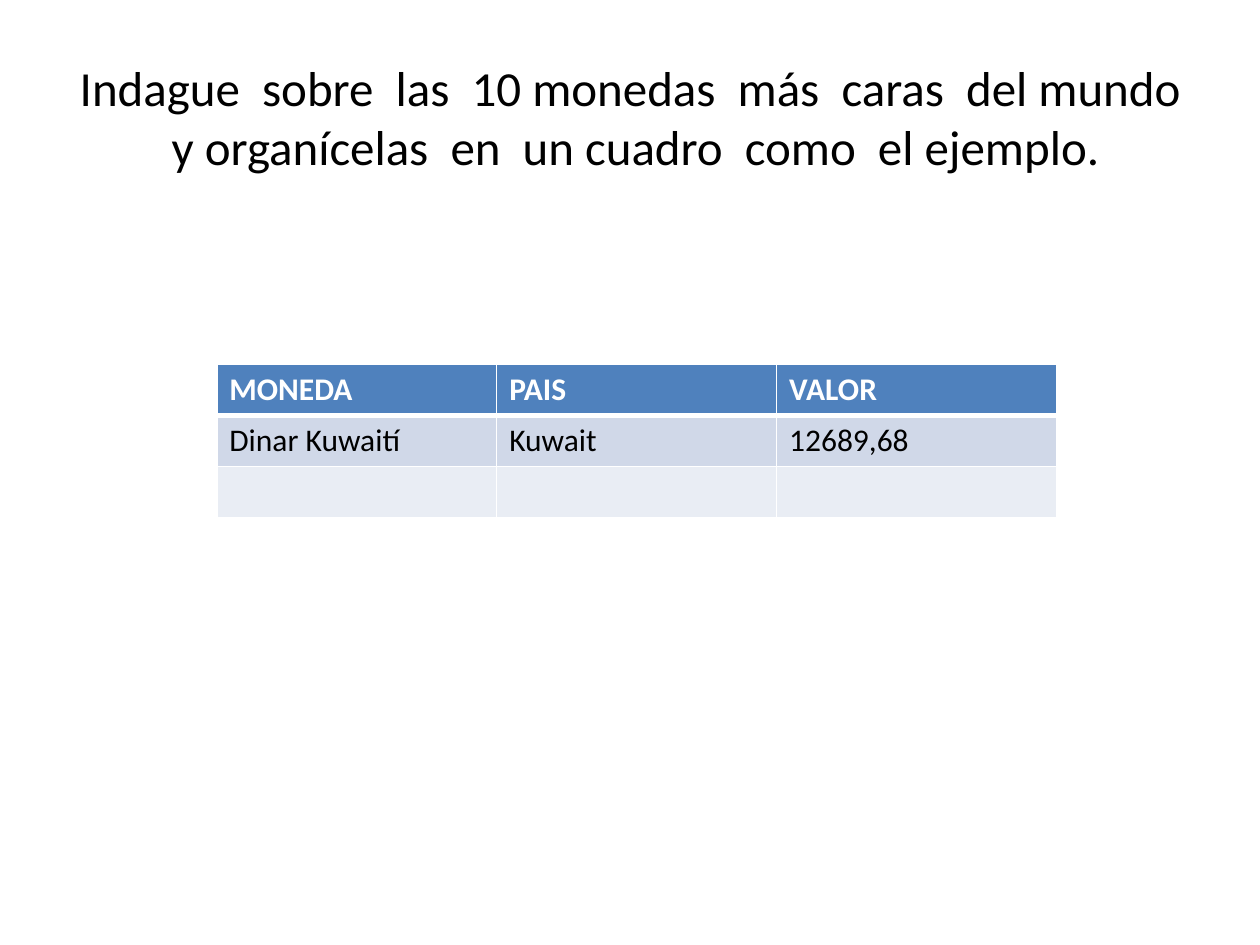
from dataclasses import dataclass

from lxml import etree
from pptx import Presentation
from pptx.dml.color import RGBColor
from pptx.enum.text import MSO_ANCHOR, PP_ALIGN
from pptx.oxml.ns import qn
from pptx.util import Cm, Pt

CENTER, MIDDLE = PP_ALIGN.CENTER, MSO_ANCHOR.MIDDLE
BLANK = 6


@dataclass(frozen=True)
class Theme:
    font: str = "Calibri"
    title_size: int = 28
    table_size: int = 18
    text: str = "000000"
    white: str = "FFFFFF"
    header: str = "4F81BD"
    bands: tuple = ("D0D8E8", "E9EDF4")
    line: float = 1
    header_line: float = 3


THEME = Theme()
TITLE = ("Indague  sobre  las  10 monedas  más  caras  del mundo  "
         "y organícelas  en  un cuadro  como  el ejemplo.")
ROWS = [
    ("MONEDA", "PAIS", "VALOR"),
    ("Dinar Kuwaití\u00a0", "Kuwait", "12689,68"),
    ("", "", ""),
]


def style_font(p, size, color, bold=False):
    p.font.name = THEME.font
    p.font.size = Pt(size)
    p.font.bold = bold
    p.font.color.rgb = RGBColor.from_string(color)


def set_borders(cell, top, bottom):
    tc_pr = cell._tc.get_or_add_tcPr()
    widths = {"a:lnL": THEME.line, "a:lnR": THEME.line, "a:lnT": top, "a:lnB": bottom}
    for tag, width in widths.items():
        ln = etree.SubElement(tc_pr, qn(tag), w=str(Pt(width)))
        fill = etree.SubElement(ln, qn("a:solidFill"))
        etree.SubElement(fill, qn("a:srgbClr"), val=THEME.white)


def add_title(slide, left, top, width, height):
    tf = slide.shapes.add_textbox(left, top, width, height).text_frame
    tf.word_wrap = True
    tf.vertical_anchor = MIDDLE
    p = tf.paragraphs[0]
    p.text = TITLE
    p.alignment = CENTER
    style_font(p, THEME.title_size, THEME.text)


def add_currency_table(slide, left, top, width, height):
    table = slide.shapes.add_table(len(ROWS), len(ROWS[0]), left, top, width, height).table
    for i, row in enumerate(ROWS):
        is_header = i == 0
        fill = THEME.header if is_header else THEME.bands[(i - 1) % 2]
        color = THEME.white if is_header else THEME.text
        # The thick rule separates the header from the body
        top_line = THEME.header_line if i == 1 else THEME.line
        bottom_line = THEME.header_line if is_header else THEME.line
        for j, text in enumerate(row):
            cell = table.cell(i, j)
            set_borders(cell, top_line, bottom_line)
            cell.fill.solid()
            cell.fill.fore_color.rgb = RGBColor.from_string(fill)
            p = cell.text_frame.paragraphs[0]
            p.text = text
            style_font(p, THEME.table_size, color, is_header)


def main():
    prs = Presentation()
    prs.slide_width, prs.slide_height = Cm(25.4), Cm(19.05)
    slide = prs.slides.add_slide(prs.slide_layouts[BLANK])
    add_title(slide, Cm(1.27), Cm(0.76), Cm(22.86), Cm(3.18))
    add_currency_table(slide, Cm(4.37), Cm(7.34), Cm(16.93), Cm(3.09))
    prs.save("out.pptx")


if __name__ == "__main__":
    main()
